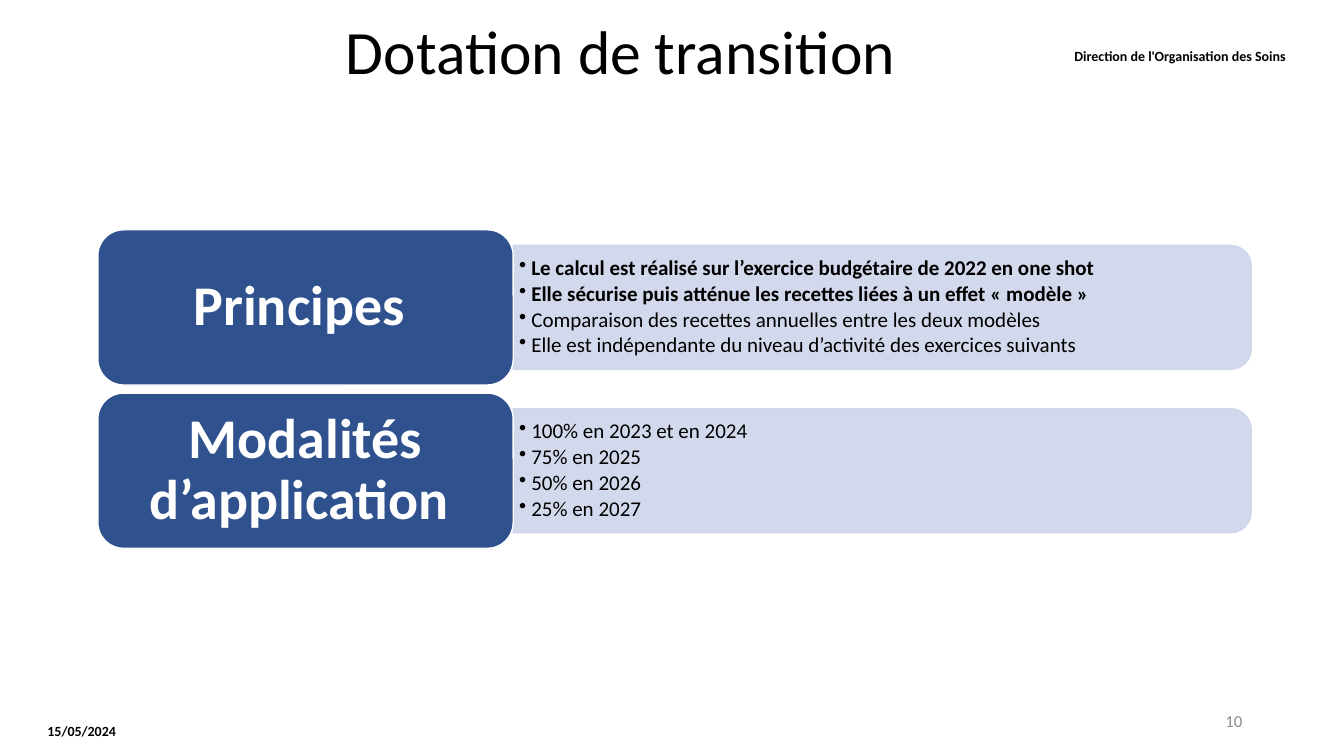
"""Build the 'Dotation de transition' slide."""
from lxml import etree
from pptx import Presentation
from pptx.dml.color import RGBColor
from pptx.enum.shapes import MSO_SHAPE as SHAPE
from pptx.enum.text import MSO_ANCHOR as ANCHOR, PP_ALIGN as ALIGN
from pptx.oxml.ns import qn
from pptx.util import Inches, Pt

TITLE = "Dotation de transition"
SECTIONS = [
    ("Principes ", [
        ("Le calcul est réalisé sur l’exercice budgétaire de 2022 en one shot", True),
        ("Elle sécurise puis atténue les recettes liées à un effet « modèle »", True),
        ("Comparaison des recettes annuelles entre les deux modèles", False),
        ("Elle est indépendante du niveau d’activité des exercices suivants", False),
    ]),
    ("Modalités d’application ", [
        ("100% en 2023 et en 2024", False),
        ("75% en 2025", False),
        ("50% en 2026", False),
        ("25% en 2027", False),
    ]),
]
MARGINALIA = [
    ("10", (9.42, 6.95, 3, 0.4), 0.1, ALIGN.RIGHT, 12, "8C8C8C", False),
    ("15/05/2024", (0.47, 7, 1.76, 0.5), 0, ALIGN.LEFT, 10, "000000", True),
    ("Direction de l'Organisation des Soins", (4.18, 0.29, 8.57, 0.52), 0,
     ALIGN.RIGHT, 10, "000000", True),
]

LEFT, TOP, PITCH = 0.97, 2.28, 1.62
LABEL_W, LABEL_H = 4.12, 1.54
PANEL_W, PANEL_H = 7.32, 1.23
TEXT_W, TEXT_H = 7.26, 1.11


def rgb(value):
    return RGBColor.from_string(value)


def box(x, y, w, h):
    return Inches(x), Inches(y), Inches(w), Inches(h)


def set_frame(tf, side, edge):
    tf.word_wrap = True
    tf.vertical_anchor = ANCHOR.MIDDLE
    tf.margin_left = tf.margin_right = Inches(side)
    tf.margin_top = tf.margin_bottom = Inches(edge)


def write(p, text, size, color="000000", bold=False, align=ALIGN.LEFT):
    p.text = text
    p.alignment = align
    font = p.runs[0].font
    font.name, font.size, font.bold = "Calibri", Pt(size), bold
    font.color.rgb = rgb(color)


def add_bullet(p):
    pPr = p._p.get_or_add_pPr()
    pPr.set("marL", str(Inches(0.12)))
    pPr.set("indent", str(-Inches(0.12)))
    etree.SubElement(pPr, qn("a:buChar")).set("char", "•")


def add_block(s, kind, place, fill, line):
    block = s.shapes.add_shape(kind, *box(*place))
    block.shadow.inherit = False
    block.fill.solid()
    block.fill.fore_color.rgb = rgb(fill)
    block.line.color.rgb = rgb(line)
    block.line.width = Pt(1)
    return block


def add_panel(s, x, mid):
    place = (x + (PANEL_W - PANEL_H) / 2, mid - PANEL_W / 2, PANEL_H, PANEL_W)
    panel = add_block(s, SHAPE.ROUND_2_SAME_RECTANGLE, place, "CFD5EA", "CFD5EA")
    panel.rotation = 90
    for color in panel._element.spPr.iter(qn("a:srgbClr")):
        etree.SubElement(color, qn("a:alpha")).set("val", "90000")


def add_points(s, x, mid, points):
    tf = s.shapes.add_textbox(*box(x, mid - TEXT_H / 2, TEXT_W, TEXT_H)).text_frame
    set_frame(tf, 0.06, 0.03)
    for i, (text, bold) in enumerate(points):
        p = tf.add_paragraph() if i else tf.paragraphs[0]
        write(p, text, 15, bold=bold)
        p.line_spacing, p.space_after = 0.9, Pt(2.25)
        add_bullet(p)


def add_label(s, y, text):
    label = add_block(s, SHAPE.ROUNDED_RECTANGLE, (LEFT, y, LABEL_W, LABEL_H),
                      "2F528F", "FFFFFF")
    set_frame(label.text_frame, 0.17, 0.08)
    p = label.text_frame.paragraphs[0]
    write(p, text, 40, "FFFFFF", True, ALIGN.CENTER)
    p.line_spacing = 0.9


def main():
    prs = Presentation()
    prs.slide_width, prs.slide_height = Inches(13.33), Inches(7.5)
    s = prs.slides.add_slide(prs.slide_layouts[5])

    title = s.shapes.title
    title.left, title.top, title.width, title.height = box(3.33, 0.15, 6, 0.79)
    set_frame(title.text_frame, 0.1, 0.05)
    p = title.text_frame.paragraphs[0]
    write(p, TITLE, 44)
    p.line_spacing = 0.9

    for text, place, inset, align, size, color, bold in MARGINALIA:
        tf = s.shapes.add_textbox(*box(*place)).text_frame
        set_frame(tf, inset, inset / 2)
        write(tf.paragraphs[0], text, size, color, bold, align)

    for i, (name, points) in enumerate(SECTIONS):
        y = TOP + i * PITCH
        mid = y + LABEL_H / 2
        add_panel(s, LEFT + LABEL_W, mid)
        add_points(s, LEFT + LABEL_W, mid, points)
        add_label(s, y, name)

    prs.save("out.pptx")


if __name__ == "__main__":
    main()
